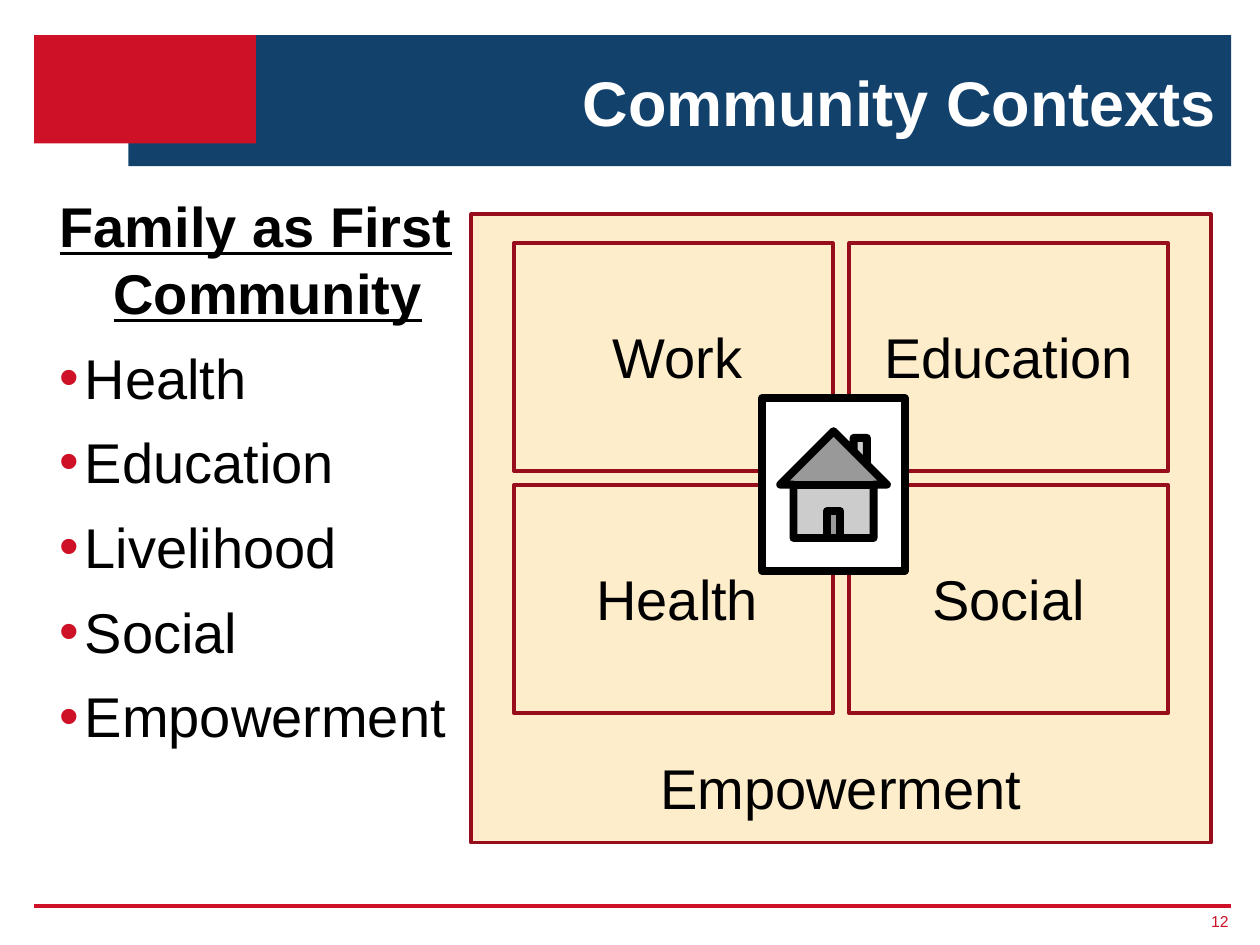
from lxml import etree
from pptx import Presentation
from pptx import util as u
from pptx.dml.color import RGBColor
from pptx.enum import shapes, text
from pptx.oxml import ns

RED, NAVY, MAROON, CREAM = "CE1126", "12416C", "980D1C", "FDEDCA"
BLACK, WHITE = "000000", "FFFFFF"
rgb = RGBColor.from_string


def add_block(kind, box, fill=None, line=None, width=2):
    block = slide.shapes.add_shape(kind, *map(u.Cm, box))
    block.shadow.inherit = False
    if fill:
        block.fill.solid()
        block.fill.fore_color.rgb = rgb(fill)
    else:
        block.fill.background()
    if line:
        block.line.color.rgb = rgb(line)
        block.line.width = u.Pt(width)
    else:
        block.line.fill.background()


def write(paragraph, words, size, color, align, bold=False, underline=False):
    paragraph.alignment = align
    run = paragraph.add_run()
    run.text = words
    run.font.name = "Arial"
    run.font.size = u.Pt(size)
    run.font.bold = bold
    run.font.underline = underline
    run.font.color.rgb = rgb(color)


prs = Presentation()
prs.slide_width, prs.slide_height = u.Cm(25.4), u.Cm(19.05)
slide = prs.slides.add_slide(prs.slide_layouts[1])
RECT = shapes.MSO_SHAPE.RECTANGLE
ALIGN = text.PP_ALIGN

# Header band and footer rule
add_block(RECT, (2.59, 0.71, 22.23, 2.64), NAVY)
add_block(RECT, (0.69, 0.71, 4.47, 2.18), RED)
rule = slide.shapes.add_connector(
    shapes.MSO_CONNECTOR.STRAIGHT, u.Cm(0.69), u.Cm(18.26), u.Cm(24.82), u.Cm(18.26))
rule.line.color.rgb = rgb(RED)
rule.line.width = u.Pt(2.25)
etree.SubElement(rule._element.spPr, ns.qn("a:effectLst"))

# Title and list, brought in front of the band
title, topics = slide.shapes.title, slide.placeholders[1]
for holder, box in ((title, (5.16, 1.19, 19.61, 1.75)),
                    (topics, (0.69, 3.73, 9.19, 14.2))):
    holder.left, holder.top, holder.width, holder.height = map(u.Cm, box)
    holder.text_frame.auto_size = text.MSO_AUTO_SIZE.NONE
    slide.shapes._spTree.append(holder._element)

title.text_frame.vertical_anchor = text.MSO_ANCHOR.BOTTOM
heading = title.text_frame.paragraphs[0]
heading.line_spacing = u.Pt(25)
write(heading, "Community Contexts", 36, WHITE, ALIGN.RIGHT, bold=True)

topics.text_frame.margin_left = 0
lead = topics.text_frame.paragraphs[0]
lead_props = lead._p.get_or_add_pPr()
lead_props.set("marL", str(u.Cm(0.48)))
lead_props.set("indent", str(-u.Cm(0.48)))
etree.SubElement(lead_props, ns.qn("a:buNone"))
lead.space_before, lead.space_after = u.Pt(0), u.Pt(5)
write(lead, "Family as First Community", 32, BLACK, ALIGN.CENTER, bold=True, underline=True)

for topic in ("Health", "Education", "Livelihood", "Social", "Empowerment"):
    item = topics.text_frame.add_paragraph()
    item.level = 1
    props = item._p.get_or_add_pPr()
    props.set("marL", str(u.Cm(1.02)))
    props.set("indent", str(-u.Cm(0.51)))
    bullet_color = etree.SubElement(props, ns.qn("a:buClr"))
    etree.SubElement(bullet_color, ns.qn("a:srgbClr"), val=RED)
    etree.SubElement(props, ns.qn("a:buFont"), typeface="Arial")
    etree.SubElement(props, ns.qn("a:buChar"), char="•")
    item.space_before = item.space_after = u.Pt(5)
    write(item, topic, 32, BLACK, ALIGN.LEFT)

# Page number
page = slide.shapes.add_textbox(u.Cm(24.08), u.Cm(18.29), u.Cm(0.69), u.Cm(0.58)).text_frame
page.margin_left = page.margin_right = page.margin_top = page.margin_bottom = 0
page.vertical_anchor = text.MSO_ANCHOR.MIDDLE
page.word_wrap = True
write(page.paragraphs[0], "12", 9, RED, ALIGN.RIGHT)

# Four contexts around the home, framed by empowerment
add_block(RECT, (9.5, 4.32, 14.91, 12.67), CREAM, MAROON)
labels = [("Empowerment", 9.5, 15.06, 14.91)]
contexts = (("Work", "Education"), ("Health", "Social"))
for row, names in enumerate(contexts):
    for column, name in enumerate(names):
        left, top = 10.36 + 6.76 * column, 4.9 + 4.88 * row
        add_block(RECT, (left, top, 6.43, 4.6), line=MAROON)
        nudge = 0 if column else 0.08
        labels.append((name, left + nudge, top + 1.47, 6.43))
add_block(shapes.MSO_SHAPE.ACTION_BUTTON_HOME, (15.37, 8.03, 2.87, 3.48), WHITE, BLACK, 4.5)

for name, left, top, width in labels:
    label = slide.shapes.add_textbox(u.Cm(left), u.Cm(top), u.Cm(width), u.Cm(1.65)).text_frame
    label.word_wrap = True
    label.auto_size = text.MSO_AUTO_SIZE.SHAPE_TO_FIT_TEXT
    write(label.paragraphs[0], name, 32, BLACK, ALIGN.CENTER)

prs.save("out.pptx")
